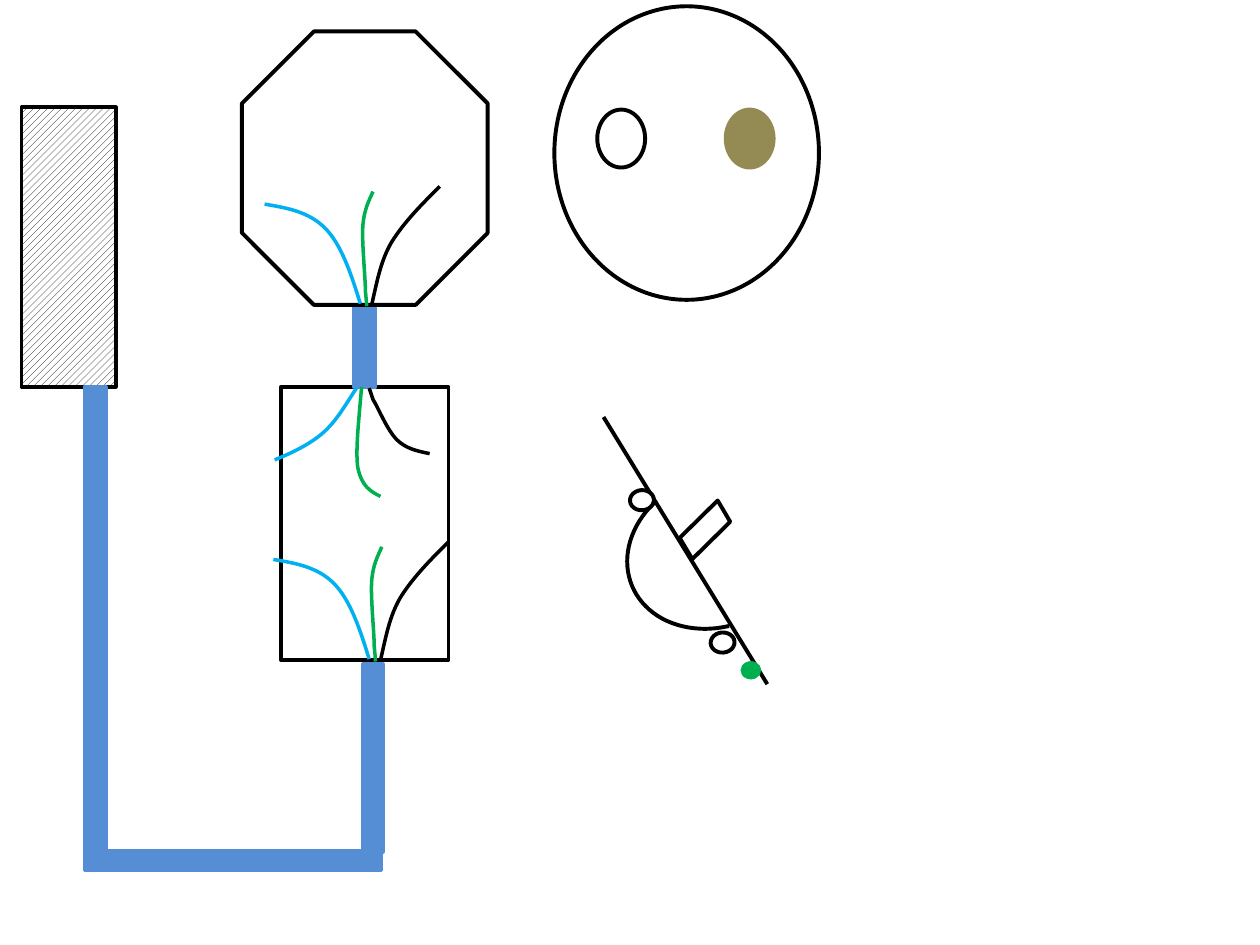
"""Draw a wiring sketch: boxes, cable runs, loose wires and a tilted plate."""
from dataclasses import dataclass
from typing import Any

from lxml.etree import SubElement
from pptx import Presentation
from pptx.dml.color import RGBColor
from pptx.enum.dml import MSO_PATTERN as Pat
from pptx.enum.shapes import MSO_CONNECTOR as Con, MSO_SHAPE as Kind
from pptx.oxml.ns import qn
from pptx.util import Inches, Pt

Point = tuple[float, float]
BLACK, WHITE, CABLE = "000000", "FFFFFF", "558ED5"
BLUE, GREEN, TAN = "00B0F0", "00B050", "948A54"


@dataclass
class Part:
    """A preset shape with its box, fill and outline."""
    kind: Kind
    box: tuple[float, float, float, float]
    fill: str | None = None
    line: str = BLACK
    width: float = 2.25
    turn: float = 0
    ends: tuple[float, ...] = ()
    hatch: bool = False


@dataclass
class Wire:
    """A wire: a start, then pieces of one point (line) or three (curve)."""
    color: str
    start: Point
    pieces: list[tuple[Point, ...]]


def paint(color: Any, value: str) -> None:
    """Set a colour from a hex string."""
    color.rgb = RGBColor.from_string(value)


def stroke(item: Any, color: str, width: float) -> None:
    """Set the outline of a shape or connector."""
    paint(item.line.color, color)
    item.line.width = Pt(width)


def draw_part(shapes: Any, part: Part) -> None:
    """Draw one preset shape."""
    item = shapes.add_shape(part.kind, *map(Inches, part.box))
    item.shadow.inherit = False
    item.rotation = part.turn
    for i, end in enumerate(part.ends):
        item.adjustments[i] = end
    if part.hatch:
        item.fill.patterned()
        item.fill.pattern = Pat.WIDE_UPWARD_DIAGONAL
        paint(item.fill.fore_color, BLACK)
        paint(item.fill.back_color, WHITE)
    elif part.fill:
        item.fill.solid()
        paint(item.fill.fore_color, part.fill)
    else:
        item.fill.background()
    stroke(item, part.line, part.width)


def draw_edge(shapes: Any, start: Point, end: Point) -> None:
    """Draw a straight line."""
    item = shapes.add_connector(Con.STRAIGHT, *map(Inches, start + end))
    SubElement(item._element.spPr, qn("a:effectLst"))
    stroke(item, BLACK, 2.25)


def curve(item: Any, sizes: list[int]) -> None:
    """Turn each run of three line segments into one Bezier segment."""
    steps = list(item._element.iter(qn("a:lnTo")))
    for size in sizes:
        run, steps = steps[:size], steps[size:]
        if size == 3:
            run[0].tag = qn("a:cubicBezTo")
            for step in run[1:]:
                run[0].append(step[0])
                step.getparent().remove(step)


def draw_wire(shapes: Any, wire: Wire, dx: float = 0, dy: float = 0) -> None:
    """Draw one wire, moved by an offset."""
    points = [wire.start, *(p for piece in wire.pieces for p in piece)]
    places = [(Inches(x + dx), Inches(y + dy)) for x, y in points]
    pen = shapes.build_freeform(*places[0])
    pen.add_line_segments(places[1:], close=False)
    item = pen.convert_to_shape()
    curve(item, [len(piece) for piece in wire.pieces])
    item.shadow.inherit = False
    item.fill.background()
    stroke(item, wire.color, 2)


PIPES = [(2.81, 2.42, 0.17, 0.65), (0.67, 3.07, 0.17, 3.68),
         (0.67, 6.75, 2.36, 0.16), (2.88, 5.27, 0.16, 1.49)]
BASE = [
    Part(Kind.RECTANGLE, (0.17, 0.85, 0.75, 2.22), width=2, hatch=True),
    Part(Kind.RECTANGLE, (2.23, 3.07, 1.33, 2.17), width=2),
    *[Part(Kind.RECTANGLE, box, CABLE, CABLE, 2) for box in PIPES],
    Part(Kind.OCTAGON, (1.92, 0.25, 1.95, 2.17), WHITE),
    Part(Kind.OVAL, (4.4, 0.05, 2.1, 2.33)),
    Part(Kind.OVAL, (4.74, 0.87, 0.38, 0.46)),
    Part(Kind.OVAL, (5.76, 0.87, 0.38, 0.46), TAN, TAN),
    Part(Kind.ARC, (4.96, 3.77, 1.46, 1.2), turn=157.7, ends=(169.91, 37.19)),
]
PLATE = [
    Part(Kind.OVAL, (5.64, 5.02, 0.19, 0.16), WHITE, turn=356),
    Part(Kind.PARALLELOGRAM, (5.36, 4.11, 0.47, 0.19), turn=315.4),
    Part(Kind.OVAL, (5.88, 5.25, 0.16, 0.14), GREEN, GREEN, 0.25),
    Part(Kind.OVAL, (5, 3.89, 0.19, 0.16), WHITE, turn=356),
]
SPRAY = [
    Wire(BLUE, (2.93, 5.23), [((2.86, 5), (2.78, 4.76), (2.65, 4.63)),
                              ((2.52, 4.5), (2.35, 4.47), (2.17, 4.44))]),
    Wire(GREEN, (2.98, 5.25), [((2.98, 5.24), (2.98, 5.23), (2.97, 5.13)),
                               ((2.97, 5.02), (2.94, 4.74), (2.95, 4.61)),
                               ((2.96, 4.48), (3, 4.41), (3.03, 4.34))]),
    Wire(BLACK, (3.02, 5.24), [((3.06, 5.07), (3.09, 4.89), (3.18, 4.74)),
                               ((3.28, 4.58), (3.42, 4.44), (3.56, 4.3))]),
]
DROPS = [
    Wire(BLUE, (2.83, 3.08), [((2.75, 3.2), (2.68, 3.33), (2.57, 3.43)),
                              ((2.47, 3.52), (2.33, 3.59), (2.18, 3.65))]),
    Wire(GREEN, (2.87, 3.07), [((2.85, 3.32), (2.82, 3.57), (2.84, 3.71)),
                               ((2.87, 3.86), (2.94, 3.9), (3.02, 3.94))]),
    Wire(BLACK, (2.93, 3.08), [((2.96, 3.17),),
                               ((3, 3.23), (3.07, 3.41), (3.15, 3.49)),
                               ((3.22, 3.56), (3.31, 3.58), (3.41, 3.6))]),
]


def main() -> None:
    """Build the slide and save it."""
    deck = Presentation()
    deck.slide_width, deck.slide_height = Inches(10), Inches(7.5)
    shapes = deck.slides.add_slide(deck.slide_layouts[6]).shapes
    for part in BASE:
        draw_part(shapes, part)
    draw_edge(shapes, (4.79, 3.31), (6.09, 5.43))
    for part in PLATE:
        draw_part(shapes, part)
    for low, drop in zip(SPRAY, DROPS):
        pair = (drop, low) if low.color == GREEN else (low, drop)
        for wire in pair:
            draw_wire(shapes, wire)
    for wire in SPRAY:
        draw_wire(shapes, wire, -0.07, -2.82)
    deck.save("out.pptx")


if __name__ == "__main__":
    main()
